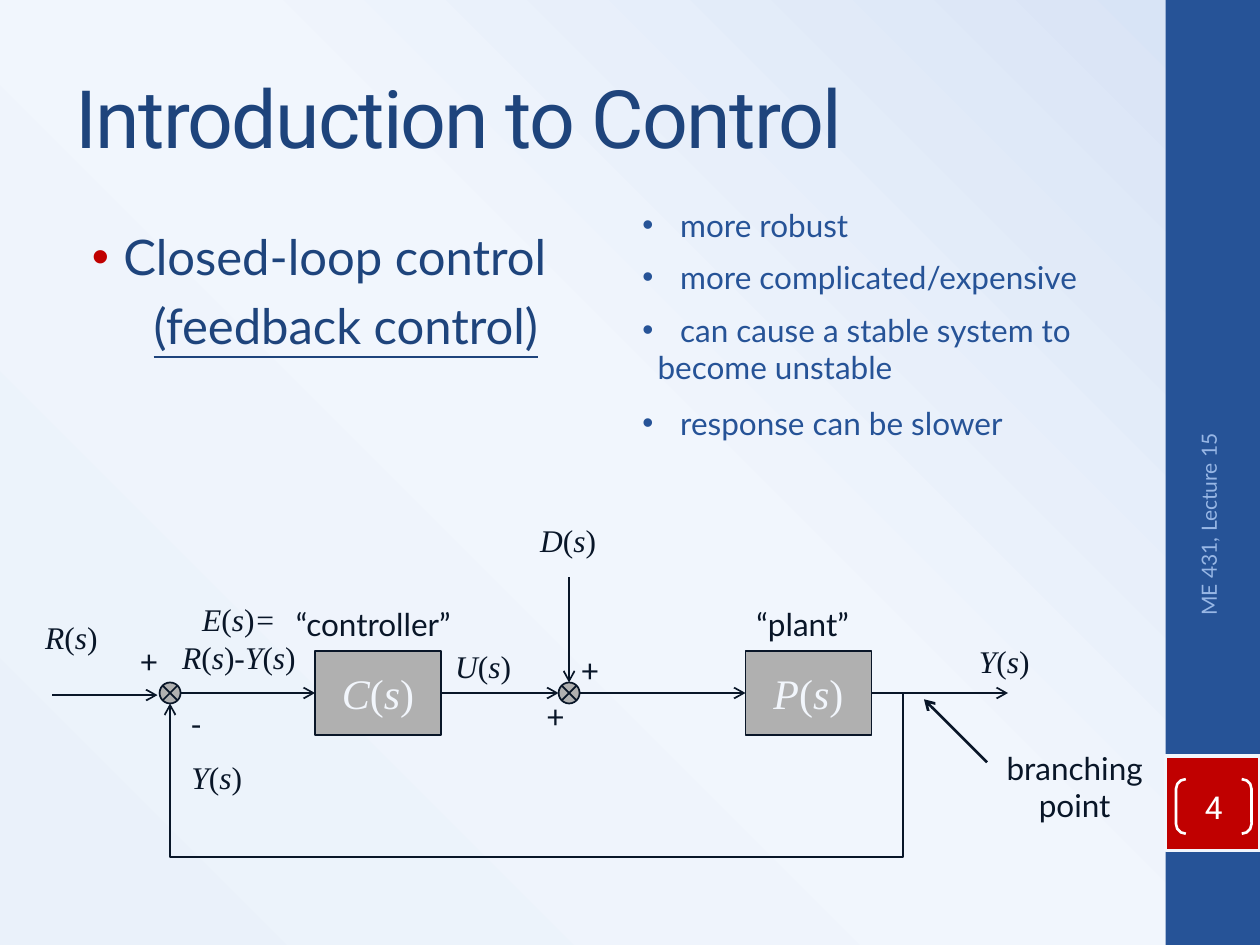
from itertools import groupby

from lxml import etree
from pptx import Presentation
from pptx.dml.color import RGBColor
from pptx.enum.shapes import MSO_CONNECTOR, MSO_SHAPE
from pptx.enum.text import MSO_ANCHOR, MSO_AUTO_SIZE, PP_ALIGN
from pptx.oxml import parse_xml
from pptx.oxml.ns import nsdecls, qn
from pptx.util import Inches, Pt

STRAIGHT, ELBOW = MSO_CONNECTOR.STRAIGHT, MSO_CONNECTOR.ELBOW
RECTANGLE, BRACKETS = MSO_SHAPE.RECTANGLE, MSO_SHAPE.DOUBLE_BRACKET
JUNCTION = MSO_SHAPE.FLOWCHART_SUMMING_JUNCTION
LEFT, CENTER, RIGHT = PP_ALIGN.LEFT, PP_ALIGN.CENTER, PP_ALIGN.RIGHT
MIDDLE = MSO_ANCHOR.MIDDLE

NAVY = RGBColor(0x1E, 0x44, 0x7C)
BLUE = RGBColor(0x26, 0x53, 0x97)
PALE_BLUE = RGBColor(0x98, 0xB7, 0xE5)
RED = RGBColor(0xC0, 0x00, 0x00)
INK = RGBColor(0x09, 0x16, 0x28)
GRAY = RGBColor(0xB0, 0xB0, 0xB0)
ICE = RGBColor(0xF2, 0xF6, 0xFC)
WHITE = RGBColor(0xFF, 0xFF, 0xFF)
BACKDROP = [(0, "EAF1FA"), (52, "F1F6FD"), (100, "D6E2F5")]
SANS, HEADING, MATH = "Lato", "Roboto", "Times New Roman"

prs = Presentation()
prs.slide_width, prs.slide_height = Inches(10), Inches(7.5)
COL, ROW = prs.slide_width / 120, prs.slide_height / 90
slide = prs.slides.add_slide(prs.slide_layouts[5])
shapes = slide.shapes


def grid(*cells):
    return [round(cell * (ROW if i % 2 else COL)) for i, cell in enumerate(cells)]


def write(paragraph, text, font, size, color, align=CENTER):
    paragraph.alignment = align
    paragraph.font.name, paragraph.font.size = font, Pt(size)
    paragraph.font.color.rgb = color
    if font != MATH:
        paragraph.add_run().text = text
        return
    for italic, letters in groupby(text, lambda c: c.isalpha() or c == "="):
        run = paragraph.add_run()
        run.text, run.font.italic = "".join(letters), italic


slide.background.fill.gradient()
gradient = slide.element.find(".//" + qn("a:gradFill"))
for part in list(gradient):
    gradient.remove(part)
stops = etree.SubElement(gradient, qn("a:gsLst"))
for share, color in BACKDROP:
    stop = etree.SubElement(stops, qn("a:gs"), pos=str(share * 1000))
    etree.SubElement(stop, qn("a:srgbClr"), val=color)
focus = etree.SubElement(gradient, qn("a:path"), path="circle")
etree.SubElement(focus, qn("a:fillToRect"), l="0", t="100000", r="100000", b="0")

title = shapes.title
title.left, title.top, title.width, title.height = grid(6, 3.6, 100, 15)
title.text_frame.auto_size = MSO_AUTO_SIZE.NONE
title.text_frame.vertical_anchor = MIDDLE
heading = title.text_frame.paragraphs[0]
write(heading, "Introduction to Control", HEADING, 46, NAVY, LEFT)
heading.runs[0].font.bold = False
heading.runs[0].font.element.set("spc", "-100") if hasattr(heading.runs[0].font, "element") else \
    title.element.find(".//" + qn("a:rPr")).set("spc", "-100")

blocks = [
    (RECTANGLE, (111, 0, 9, 90), BLUE, None, 0, "", SANS, 12, WHITE),
    (RECTANGLE, (111, 72, 9, 9), RED, ICE, 2, "", SANS, 12, WHITE),
    (BRACKETS, (112, 74.2, 7.2, 5.2), None, WHITE, 1.5, "4", HEADING, 18, WHITE),
    (RECTANGLE, (30, 62, 12, 8), GRAY, INK, 1, "C(s)", MATH, 24, ICE),
    (RECTANGLE, (71, 62, 12, 8), GRAY, INK, 1, "P(s)", MATH, 24, ICE),
    (JUNCTION, (53.2, 65, 2, 2), GRAY, INK, 1, "", SANS, 12, INK),
    (JUNCTION, (15.2, 65, 2, 2), GRAY, INK, 1, "", SANS, 12, INK),
]
drawn = []
for kind, cells, fill, line, weight, text, font, size, color in blocks:
    block = shapes.add_shape(kind, *grid(*cells))
    block.shadow.inherit = False
    if fill is None:
        block.fill.background()
    else:
        block.fill.solid()
        block.fill.fore_color.rgb = fill
    if line is None:
        block.line.fill.background()
    else:
        block.line.color.rgb, block.line.width = line, Pt(weight)
    if text:
        frame = block.text_frame
        frame.vertical_anchor = MIDDLE
        frame.margin_left = frame.margin_right = frame.margin_top = frame.margin_bottom = 0
        write(frame.paragraphs[0], text, font, size, color)
    drawn.append(block)
page_brackets, controller, plant = drawn[2:5]
page_brackets.adjustments[0] = 0.18

lecture = shapes.add_textbox(*grid(99.6, 53.2, 31, 4.8))
lecture.rotation = 270
lecture.text_frame.word_wrap = True
lecture.text_frame.vertical_anchor = MIDDLE
write(lecture.text_frame.paragraphs[0], "ME 431, Lecture 15", SANS, 12, PALE_BLUE, RIGHT)

outlines = [
    ((6, 21, 50, 20), 28, NAVY, "C00000", [
        ("Closed-loop control", 0.38, -0.25, 0, True),
        ("(feedback control)\t", 0, 0.62, 5.6, False)]),
    ((60, 19, 50, 24), 18, BLUE, "265397", [
        ("more robust", 0.3, -0.3, 0, True),
        ("more complicated/expensive", 0.3, -0.3, 8.4, True),
        ("can cause a stable system to", 0.3, -0.3, 8.4, True),
        ("become unstable", 0.12, 0, 0, False),
        ("response can be slower", 0.3, -0.3, 10, True)]),
]
for cells, size, color, bullet_color, items in outlines:
    frame = shapes.add_textbox(*grid(*cells)).text_frame
    frame.word_wrap = True
    for i, (text, margin, indent, gap, bulleted) in enumerate(items):
        item = frame.add_paragraph() if i else frame.paragraphs[0]
        write(item, text, SANS, size, color, LEFT)
        item.space_before = Pt(gap)
        props = item._p.get_or_add_pPr()
        props.set("marL", str(Inches(margin)))
        props.set("indent", str(Inches(indent)))
        extras = []
        if bulleted:
            extras = [f'<a:buClr {nsdecls("a")}><a:srgbClr val="{bullet_color}"/></a:buClr>',
                      f'<a:buFont {nsdecls("a")} typeface="Arial"/>',
                      f'<a:buChar {nsdecls("a")} char="•"/>']
        elif text.endswith("\t"):
            item.runs[0].font.underline = True
            extras = [f'<a:tabLst {nsdecls("a")}><a:tab pos="{Inches(4.17)}" algn="l"/></a:tabLst>']
        for extra in extras:
            props.find(qn("a:defRPr")).addprevious(parse_xml(extra))

labels = [
    ("R(s)", MATH, 3.1, 58.3, 7.4), ("E(s)=\nR(s)-Y(s)", MATH, 16.1, 56.6, 13.3),
    ("U(s)", MATH, 42.1, 61, 7.8), ("D(s)", MATH, 50.2, 49, 7.8),
    ("Y(s)", MATH, 92, 60.6, 7.3), ("Y(s)", MATH, 17, 71.6, 7.3),
    ("“controller”", SANS, 26.8, 57, 17.5), ("“plant”", SANS, 70.7, 57, 11.5),
    ("branching\npoint", SANS, 94, 70.7, 16.7),
    ("+", SANS, 53.9, 61.4, 4.6), ("+", SANS, 50.6, 65.8, 4.6),
    ("+", SANS, 11.9, 60.6, 4.6), ("-", SANS, 16.9, 66.6, 3.6),
]
for text, font, left, top, width in labels:
    lines = text.split("\n")
    frame = shapes.add_textbox(*grid(left, top, width, 1.1 + 3.7 * len(lines))).text_frame
    frame.word_wrap = False
    for i, line in enumerate(lines):
        write(frame.add_paragraph() if i else frame.paragraphs[0], line, font, 18, INK)

arrows = [
    (STRAIGHT, (5, 66.2, 15, 66.2), 1, None, None),
    (STRAIGHT, (17.2, 66, 30, 66), 1, None, controller),
    (STRAIGHT, (42, 66, 53.2, 66), 1, controller, None),
    (STRAIGHT, (54.2, 55, 54.2, 65), 1, None, None),
    (STRAIGHT, (55.2, 66, 71, 66), 1, None, plant),
    (STRAIGHT, (83, 66, 96, 66), 1, plant, None),
    (STRAIGHT, (94, 72.6, 88, 66.6), 1.5, None, None),
    (ELBOW, (83, 66, 16.2, 67), 1, None, None),
]
for kind, cells, weight, source, target in arrows:
    arrow = shapes.add_connector(kind, *grid(*cells))
    if source:
        arrow.begin_connect(source, 3)
    if target:
        arrow.end_connect(target, 1)
    arrow.line.color.rgb, arrow.line.width = INK, Pt(weight)
    props = arrow.element.spPr
    etree.SubElement(props.find(qn("a:ln")), qn("a:tailEnd"), type="arrow")
    etree.SubElement(props, qn("a:effectLst"))
    if kind == ELBOW:
        geometry = props.find(qn("a:prstGeom"))
        geometry.set("prst", "bentConnector4")
        guides = geometry.find(qn("a:avLst"))
        for name, share in (("adj1", -3 / 66.8), ("adj2", 15.6)):
            etree.SubElement(guides, qn("a:gd"), name=name, fmla=f"val {round(share * 100000)}")

prs.save("out.pptx")
